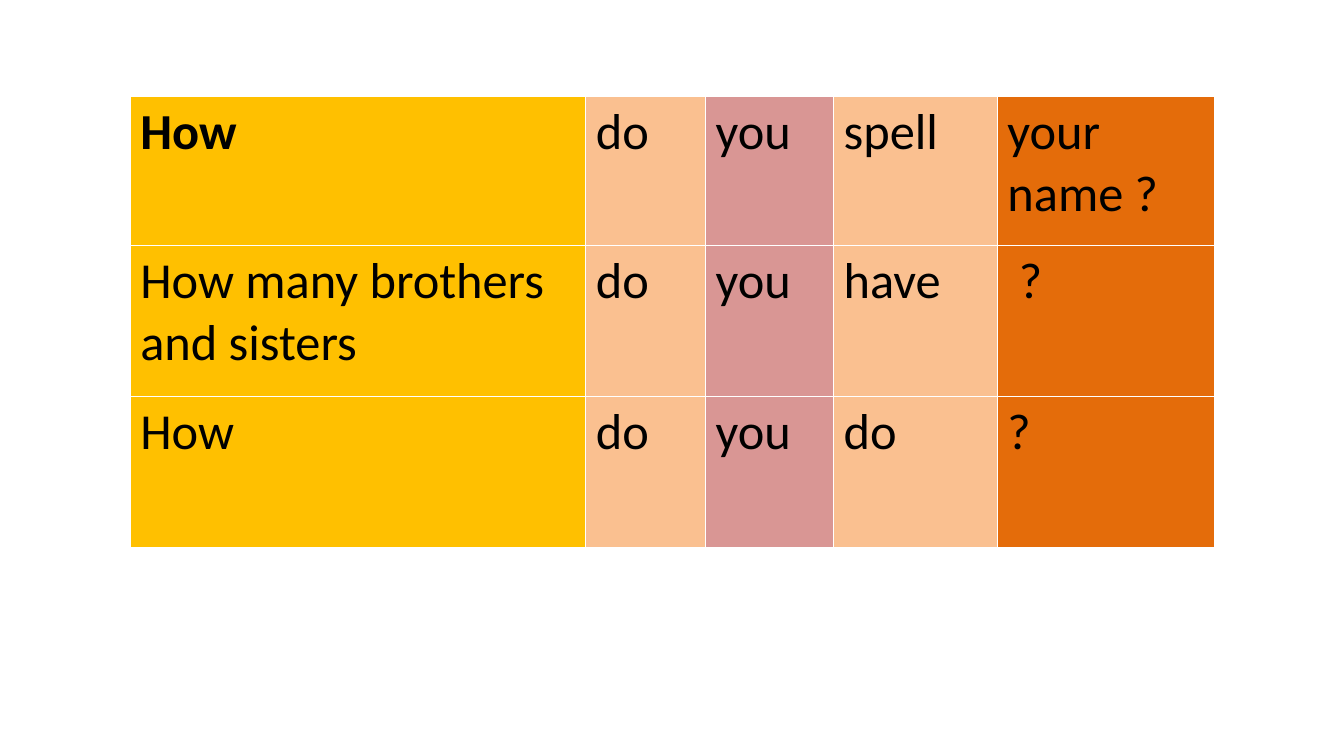
"""Build a slide with a colour-coded table of questions."""
from dataclasses import dataclass

from lxml.etree import SubElement
from pptx import Presentation
from pptx.dml.color import RGBColor
from pptx.oxml.ns import qn
from pptx.slide import Slide
from pptx.table import _Cell
from pptx.util import Emu, Pt

SCALE = 9525
BLACK = RGBColor(0x00, 0x00, 0x00)
WHITE = RGBColor(0xFF, 0xFF, 0xFF)
GOLD = RGBColor(0xFF, 0xC0, 0x00)
PEACH = RGBColor(0xFA, 0xC0, 0x90)
ROSE = RGBColor(0xD9, 0x96, 0x94)
ORANGE = RGBColor(0xE4, 0x6C, 0x0A)


@dataclass(frozen=True)
class Column:
    """A sentence part: width in px, colour and words from top to bottom."""

    width: int
    fill: RGBColor
    words: tuple[str, ...]


COLUMNS = (
    Column(434, GOLD, ("How", "How many brothers and sisters", "How")),
    Column(114, PEACH, ("do", "do", "do")),
    Column(122, ROSE, ("you", "you", "you")),
    Column(156, PEACH, ("spell", "have", "do")),
    Column(207, ORANGE, ("your name ?", " ?", "?")),
)
ROWS = (142, 144, 144)


def px(count: int) -> Emu:
    """Turn px into EMU."""
    return Emu(count * SCALE)


def edge(cell: _Cell) -> None:
    """Give all four sides of a cell a thin white border."""
    props = cell._tc.get_or_add_tcPr()
    for side in ("lnL", "lnR", "lnT", "lnB"):
        line = SubElement(props, qn(f"a:{side}"), w=str(Pt(1)))
        paint = SubElement(line, qn("a:solidFill"))
        SubElement(paint, qn("a:srgbClr"), val=str(WHITE))


def write(cell: _Cell, text: str, fill: RGBColor, bold: bool) -> None:
    """Fill a cell with its colour and word."""
    edge(cell)
    cell.fill.solid()
    cell.fill.fore_color.rgb = fill
    run = cell.text_frame.paragraphs[0].add_run()
    run.text = text
    font = run.font
    font.name = "Calibri"
    font.size = Pt(36)
    font.bold = bold
    font.color.rgb = BLACK


def draw(slide: Slide) -> None:
    """Draw the table of questions."""
    width = sum(col.width for col in COLUMNS)
    frame = slide.shapes.add_table(
        len(ROWS), len(COLUMNS), px(124), px(92), px(width), px(sum(ROWS))
    )
    table = frame.table
    table.first_row = False
    table.horz_banding = False
    for row, height in zip(table.rows, ROWS):
        row.height = px(height)
    for x, col in enumerate(COLUMNS):
        table.columns[x].width = px(col.width)
        for y, word in enumerate(col.words):
            write(table.cell(y, x), word, col.fill, bold=x == y == 0)


def main() -> None:
    """Build and save the deck."""
    deck = Presentation()
    deck.slide_width = px(1280)
    deck.slide_height = px(720)
    draw(deck.slides.add_slide(deck.slide_layouts[6]))
    deck.save("out.pptx")


if __name__ == "__main__":
    main()
